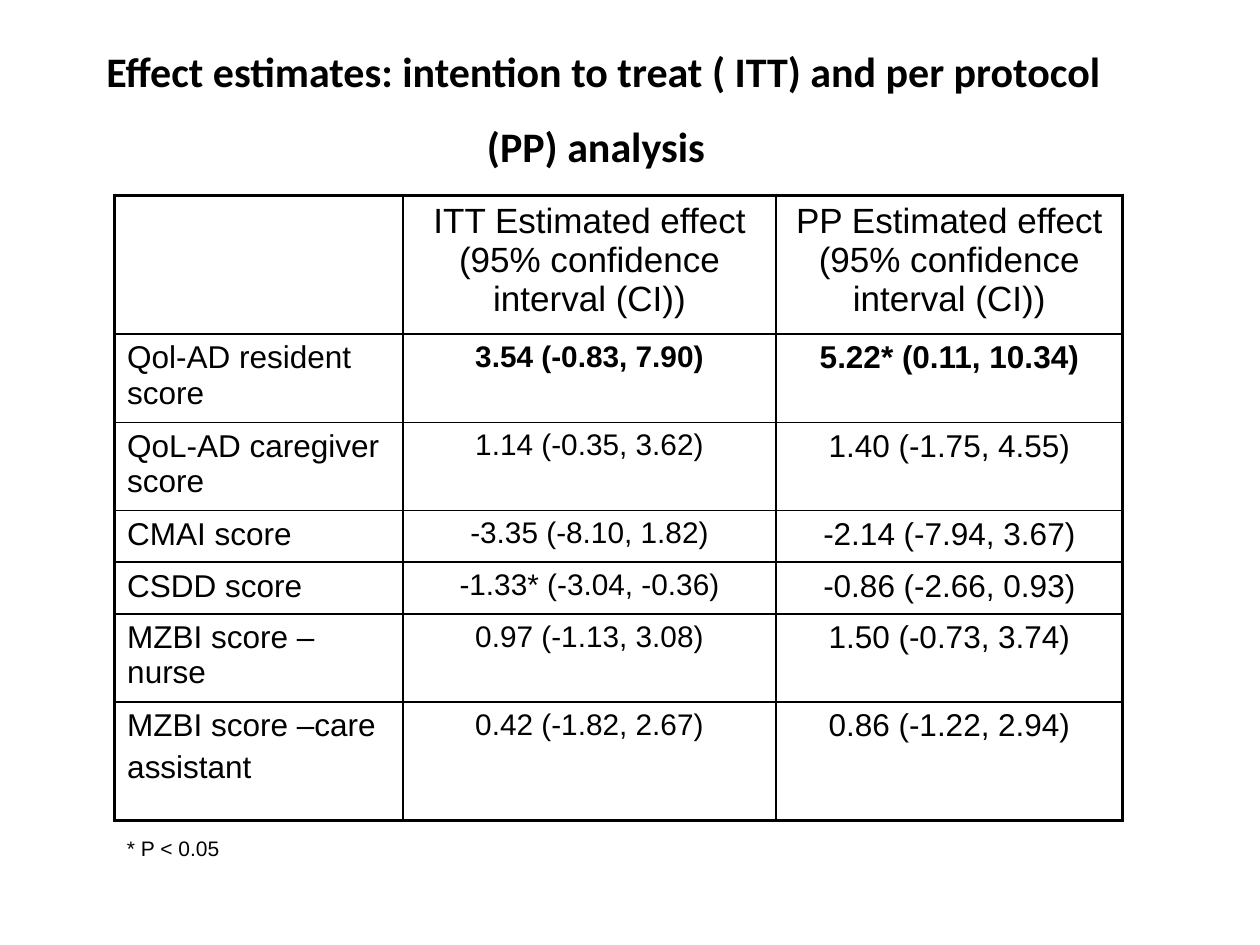
from typing import NamedTuple

from lxml import etree
from pptx import Presentation
from pptx.dml.color import RGBColor
from pptx.enum import text
from pptx.oxml import ns
from pptx.util import Inches, Pt

BLACK = RGBColor(0x00, 0x00, 0x00)
THICK, THIN = Pt(2.25), Pt(1)
COLUMN_WIDTHS = (2.29, 2.96, 2.75)
LEFT, CENTER = text.PP_ALIGN.LEFT, text.PP_ALIGN.CENTER


class Row(NamedTuple):
    height: float
    label: str
    itt: str
    pp: str
    sizes: tuple[float, float, float] = (18, 17, 18)
    bold: bool = False


ROWS = [
    Row(1.1, "", "ITT Estimated effect (95% confidence interval (CI))",
        "PP Estimated effect (95% confidence interval (CI))", (20, 20, 20)),
    Row(0.7, "Qol-AD resident score", "3.54 (-0.83, 7.90)", "5.22* (0.11, 10.34)", bold=True),
    Row(0.7, "QoL-AD caregiver score", "1.14 (-0.35, 3.62)", "1.40 (-1.75, 4.55)"),
    Row(0.41, "CMAI score", "-3.35 (-8.10, 1.82)", "-2.14 (-7.94, 3.67)"),
    Row(0.41, "CSDD score", "-1.33* (-3.04, -0.36)", "-0.86 (-2.66, 0.93)"),
    Row(0.7, "MZBI score – nurse", "0.97 (-1.13, 3.08)", "1.50 (-0.73, 3.74)"),
    Row(0.94, "MZBI score –care\nassistant", "0.42 (-1.82, 2.67)", "0.86 (-1.22, 2.94)"),
]


def set_font(font, name: str, size: float, bold: bool = False) -> None:
    font.name, font.size, font.bold = name, Pt(size), bold
    font.color.rgb = BLACK


def add_text_box(s, left: float, top: float, width: float, height: float):
    tf = s.shapes.add_textbox(*map(Inches, (left, top, width, height))).text_frame
    tf.word_wrap = True
    return tf


def set_borders(cell, widths: dict[str, int]) -> None:
    tc_pr = cell._tc.get_or_add_tcPr()
    for i, (side, width) in enumerate(widths.items()):
        line = etree.Element(ns.qn(f"a:ln{side}"), w=str(int(width)))
        fill = etree.SubElement(line, ns.qn("a:solidFill"))
        etree.SubElement(fill, ns.qn("a:srgbClr"), val=str(BLACK))
        tc_pr.insert(i, line)


def fill_cell(cell, value: str, size: float, bold: bool, align) -> None:
    cell.fill.background()
    tf = cell.text_frame
    tf.text = value
    for i, p in enumerate(tf.paragraphs):
        p.alignment = align
        set_font(p.font, "Arial", size, bold)
        if i:
            p.space_before = Pt(size * 0.2)


def add_results_table(s, left: float, top: float) -> None:
    last_row, last_col = len(ROWS) - 1, len(COLUMN_WIDTHS) - 1
    table = s.shapes.add_table(
        len(ROWS), len(COLUMN_WIDTHS), Inches(left), Inches(top),
        Inches(sum(COLUMN_WIDTHS)), Inches(sum(row.height for row in ROWS))).table
    table.first_row = table.horz_banding = False
    for column, width in zip(table.columns, COLUMN_WIDTHS):
        column.width = Inches(width)
    for r, row in enumerate(ROWS):
        table.rows[r].height = Inches(row.height)
        for c, value in enumerate((row.label, row.itt, row.pp)):
            cell = table.cell(r, c)
            fill_cell(cell, value, row.sizes[c], row.bold and c > 0, CENTER if c else LEFT)
            # Thick outer frame, thin inner grid
            set_borders(cell, {
                "L": THICK if c == 0 else THIN,
                "R": THICK if c == last_col else THIN,
                "T": THICK if r == 0 else THIN,
                "B": THICK if r == last_row else THIN,
            })


def main() -> None:
    prs = Presentation()
    prs.slide_width, prs.slide_height = Inches(10), Inches(7.5)
    s = prs.slides.add_slide(prs.slide_layouts[6])

    # Title: the large closing space sets the height of the second line
    tf = add_text_box(s, 0.58, 0.25, 8.42, 1.25)
    tf.vertical_anchor = text.MSO_ANCHOR.MIDDLE
    p = tf.paragraphs[0]
    p.alignment = CENTER
    title = "Effect estimates: intention to treat ( ITT) and per protocol (PP) analysis"
    for value, size, bold in ((title, 24, True), (" ", 38, False)):
        r = p.add_run()
        r.text = value
        set_font(r.font, "Calibri", size, bold)

    # Effect estimates
    add_results_table(s, 0.91, 1.55)

    # Significance note
    tf = add_text_box(s, 0.91, 6.58, 2.67, 0.3)
    tf.text = "* P < 0.05"
    set_font(tf.paragraphs[0].font, "Arial", 12)

    prs.save("out.pptx")


if __name__ == "__main__":
    main()
